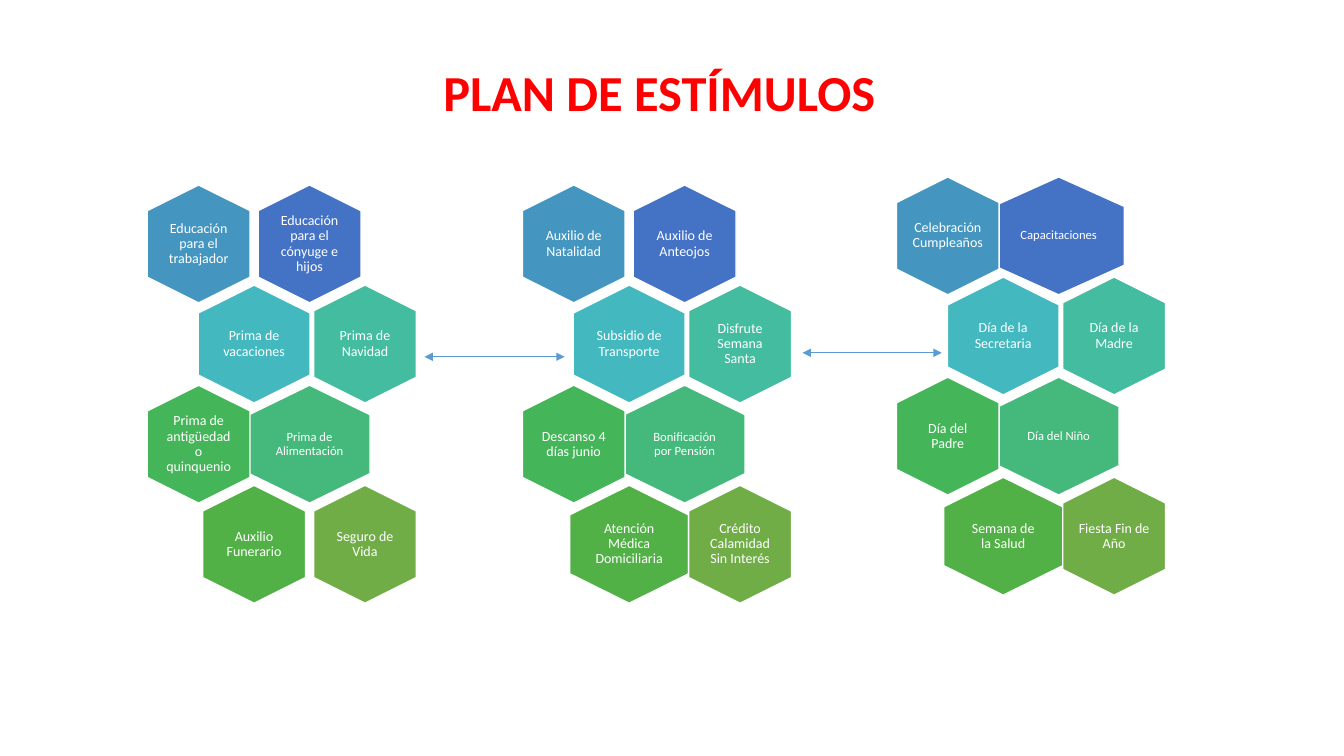
from dataclasses import dataclass

from lxml import etree
from pptx import Presentation
from pptx.dml.color import RGBColor
from pptx.enum.shapes import MSO_CONNECTOR, MSO_SHAPE
from pptx.enum.text import MSO_ANCHOR, PP_ALIGN
from pptx.oxml.ns import qn
from pptx.util import Inches, Pt

HEXAGON = MSO_SHAPE.HEXAGON
STRAIGHT = MSO_CONNECTOR.STRAIGHT
CENTER = PP_ALIGN.CENTER
MIDDLE, BOTTOM = MSO_ANCHOR.MIDDLE, MSO_ANCHOR.BOTTOM


@dataclass(frozen=True)
class Theme:
    font: str = "Calibri"
    title: str = "FF0000"
    white: str = "FFFFFF"
    arrow: str = "5B9BD5"
    # (lead, side) fill of each row
    fills: tuple = (("4472C4", "4496C1"), ("43B8BF", "43BCA0"),
                    ("44B97B", "45B559"), ("52B146", "70AD47"))
    big: int = 36
    body: int = 10
    small: int = 9


THEME = Theme()

# Honeycomb grid, in inches
TALL = 1.17          # height of every hexagon
SPAN = 1.02          # width of a side hexagon
COL = 1.1            # step between columns
ROW = 2.98 / 3       # step between rows
WIDE = 1.2           # from this width on, text is small

# Centre of the first cell, widths of the lead cells, (lead, side) texts by row
COMBS = (
    (1.97, 2.42, (1.02, 1.11, 1.2, 1.02), (
        ("Educación para el cónyuge e hijos", "Educación para el trabajador"),
        ("Prima de vacaciones", "Prima de Navidad"),
        ("Prima de Alimentación", "Prima de antigüedad o quinquenio"),
        ("Auxilio Funerario", "Seguro de Vida"))),
    (5.69, 2.42, (1.02, 1.11, 1.2, 1.18), (
        ("Auxilio de Anteojos", "Auxilio de Natalidad"),
        ("Subsidio de Transporte", "Disfrute Semana Santa"),
        ("Bonificación por Pensión", "Descanso 4 días junio"),
        ("Atención Médica Domiciliaria", "Crédito Calamidad Sin Interés"))),
    (9.4, 2.34, (1.3, 1.11, 1.2, 1.18), (
        ("Capacitaciones", "Celebración Cumpleaños"),
        ("Día de la Secretaria", "Día de la Madre"),
        ("Día del Niño", "Día del Padre"),
        ("Semana de la Salud", "Fiesta Fin de Año"))),
)

# Left end, right end, height
ARROWS = ((4.21, 5.6, 3.54), (7.96, 9.34, 3.5))


def color(code):
    return RGBColor.from_string(code)


def add_text(shapes, text, box, *, size, ink, bold=False, anchor=MIDDLE,
             pad=(0.1, 0.05)):
    area = shapes.add_textbox(*map(Inches, box))
    frame = area.text_frame
    frame.word_wrap = True
    frame.vertical_anchor = anchor
    frame.margin_left = frame.margin_right = Inches(pad[0])
    frame.margin_top = frame.margin_bottom = Inches(pad[1])
    para = frame.paragraphs[0]
    para.alignment = CENTER
    para.line_spacing = 0.9
    run = para.add_run()
    run.text = text
    run.font.name = THEME.font
    run.font.size = Pt(size)
    run.font.bold = bold
    run.font.color.rgb = color(ink)


def add_cell(shapes, text, x, y, span, fill, pad):
    """Upright hexagon around the centre (x, y), with its label."""
    hexa = shapes.add_shape(HEXAGON, Inches(x - TALL / 2), Inches(y - span / 2),
                            Inches(TALL), Inches(span))
    hexa.rotation = 90
    hexa.shadow.inherit = False
    hexa.fill.solid()
    hexa.fill.fore_color.rgb = color(fill)
    hexa.line.color.rgb = color(THEME.white)
    hexa.line.width = Pt(1)

    # The label widens with about half of the extra width
    width, height = 0.7 + 0.56 * (span - SPAN), 0.8
    size = THEME.small if span >= WIDE else THEME.body
    add_text(shapes, text, (x - width / 2, y - height / 2, width, height),
             size=size, ink=THEME.white, pad=(pad, pad))


def add_comb(slide, left, top, spans, rows):
    shapes = slide.shapes.add_group_shape().shapes
    for row, (texts, span, fills) in enumerate(zip(rows, spans, THEME.fills)):
        odd = row % 2
        y = top + row * ROW
        start = left + odd * COL / 2
        # The lead cell is on the right in even rows, on the left in odd ones
        lead, side = start + (1 - odd) * COL, start + odd * COL
        add_cell(shapes, texts[0], lead, y, span, fills[0], 0.04)
        add_cell(shapes, texts[1], side, y, SPAN, fills[1], 0)


def add_arrow(slide, start, end, y):
    line = slide.shapes.add_connector(STRAIGHT, Inches(start), Inches(y),
                                      Inches(end), Inches(y))
    line.line.color.rgb = color(THEME.arrow)
    line.line.width = Pt(0.5)
    stroke = line.line._get_or_add_ln()
    for tip in ("a:headEnd", "a:tailEnd"):
        etree.SubElement(stroke, qn(tip), type="triangle")
    etree.SubElement(line._element.spPr, qn("a:effectLst"))


def main():
    deck = Presentation()
    deck.slide_width, deck.slide_height = Inches(13.33), Inches(7.5)
    slide = deck.slides.add_slide(deck.slide_layouts[6])

    # Title
    add_text(slide.shapes, "PLAN DE ESTÍMULOS", (1.54, 0.33, 10, 0.93),
             size=THEME.big, ink=THEME.title, bold=True, anchor=BOTTOM)

    # Honeycombs
    for comb in COMBS:
        add_comb(slide, *comb)

    # Links between them
    for arrow in ARROWS:
        add_arrow(slide, *arrow)

    deck.save("out.pptx")


if __name__ == "__main__":
    main()
